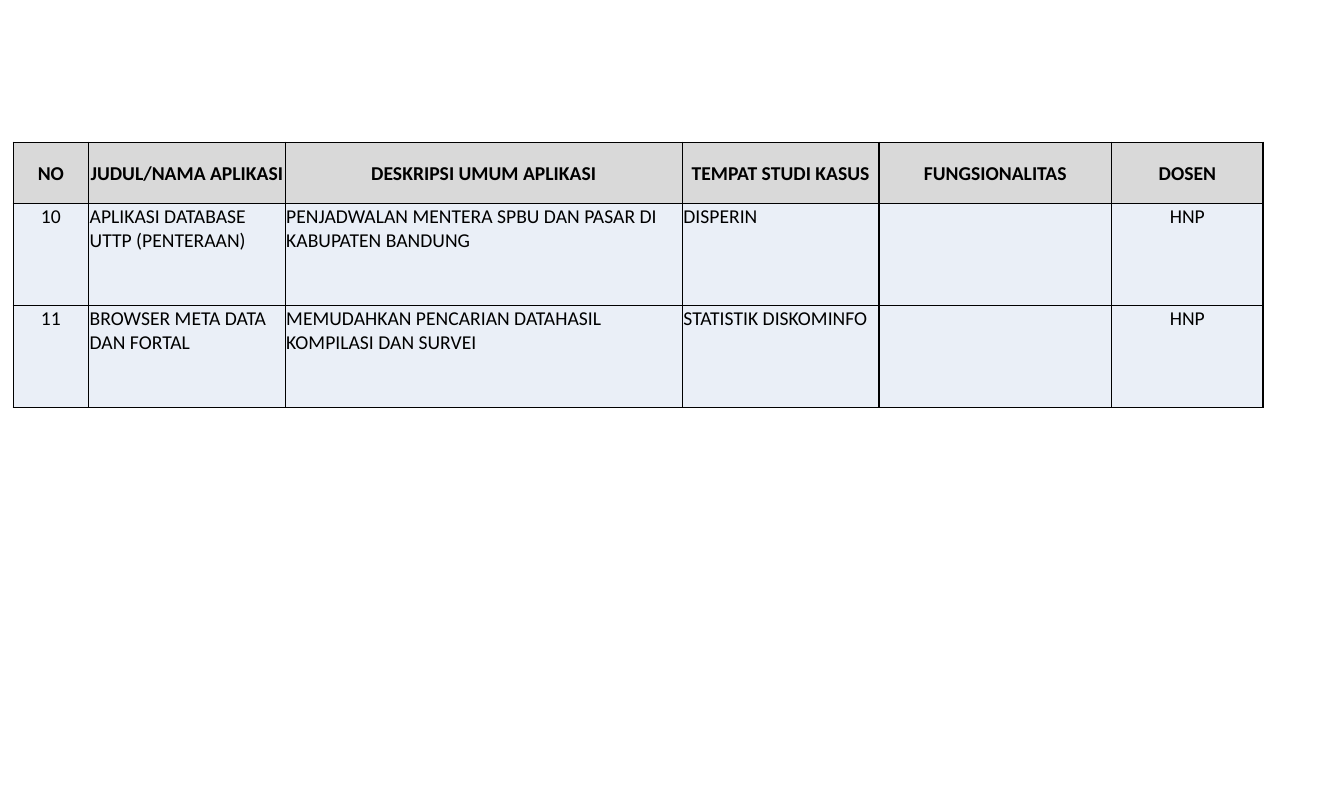
from lxml import etree
from pptx import Presentation
from pptx.dml.color import RGBColor
from pptx.enum.text import MSO_ANCHOR, PP_ALIGN
from pptx.oxml.ns import qn
from pptx.util import Inches, Pt

CENTER, LEFT = PP_ALIGN.CENTER, PP_ALIGN.LEFT
MIDDLE, TOP = MSO_ANCHOR.MIDDLE, MSO_ANCHOR.TOP

COL_WIDTHS = [0.75, 1.95, 3.94, 1.95, 2.31, 1.5]
ROW_HEIGHTS = [0.61, 1.01, 1.01]
CENTERED_COLS = (0, 5)
ROWS = [
    ["NO", "JUDUL/NAMA APLIKASI", "DESKRIPSI UMUM APLIKASI",
     "TEMPAT STUDI KASUS", "FUNGSIONALITAS", "DOSEN"],
    ["10", "APLIKASI DATABASE UTTP (PENTERAAN)",
     "PENJADWALAN MENTERA SPBU DAN PASAR DI KABUPATEN BANDUNG",
     "DISPERIN", "", "HNP"],
    ["11", "BROWSER META DATA DAN FORTAL",
     "MEMUDAHKAN PENCARIAN DATAHASIL KOMPILASI DAN SURVEI",
     "STATISTIK DISKOMINFO", "", "HNP"],
]


def write_cell(cell, text, fill="EAEFF7", color="000000", size=14,
               bold=False, align=LEFT, anchor=TOP):
    """Fill one table cell, with a thin black border on all sides."""
    cell.margin_left = cell.margin_right = cell.margin_top = Inches(0.01)
    cell.margin_bottom = 0
    cell.vertical_anchor = anchor
    tc_pr = cell._tc.get_or_add_tcPr()
    for side in ("a:lnL", "a:lnR", "a:lnT", "a:lnB"):
        ln = etree.SubElement(tc_pr, qn(side), w=str(Pt(1)))
        line_fill = etree.SubElement(ln, qn("a:solidFill"))
        etree.SubElement(line_fill, qn("a:srgbClr"), val="000000")
    cell.fill.solid()
    cell.fill.fore_color.rgb = RGBColor.from_string(fill)
    p = cell.text_frame.paragraphs[0]
    p.alignment = align
    if text:
        r = p.add_run()
        r.text = text
        r.font.name = "Calibri"
        r.font.size = Pt(size)
        r.font.bold = bold
        r.font.color.rgb = RGBColor.from_string(color)


prs = Presentation()
prs.slide_width, prs.slide_height = Inches(40 / 3), Inches(20 / 2.54)
s = prs.slides.add_slide(prs.slide_layouts[6])

table = s.shapes.add_table(
    len(ROW_HEIGHTS), len(COL_WIDTHS), Inches(0.13), Inches(1.41),
    Inches(sum(COL_WIDTHS)), Inches(sum(ROW_HEIGHTS))).table
table.horz_banding = False
for column, width in zip(table.columns, COL_WIDTHS):
    column.width = Inches(width)
for row, height in zip(table.rows, ROW_HEIGHTS):
    row.height = Inches(height)

for i, texts in enumerate(ROWS):
    for j, text in enumerate(texts):
        cell = table.cell(i, j)
        if i == 0:
            write_cell(cell, text, fill="D9D9D9", bold=True,
                       align=CENTER, anchor=MIDDLE)
        else:
            write_cell(cell, text,
                       align=CENTER if j in CENTERED_COLS else LEFT)

prs.save("out.pptx")
